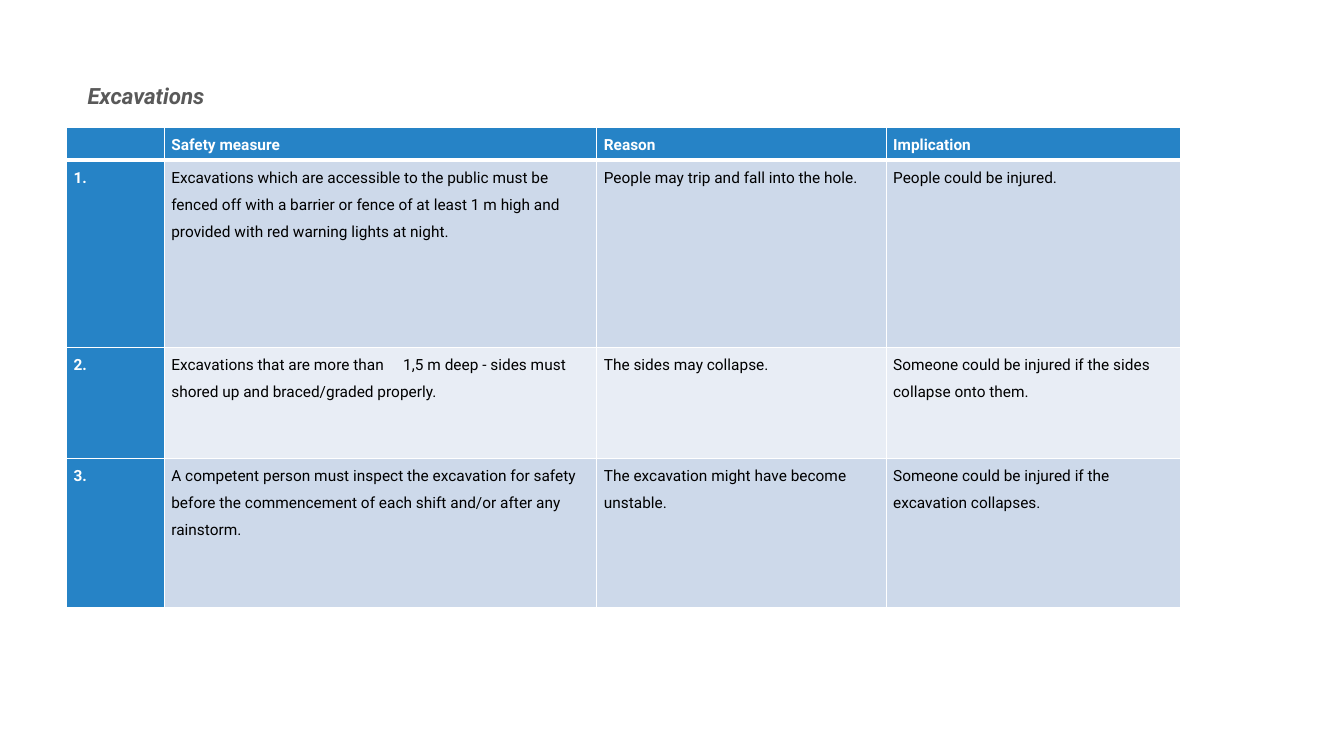
from lxml.etree import SubElement
from pptx import Presentation
from pptx.dml.color import RGBColor
from pptx.oxml.ns import qn
from pptx.util import Inches, Pt

FONT = "Roboto"
BLUE, LIGHT, PALE = "2683C6", "CDD9EA", "E8EDF5"
WHITE, BLACK, GREY = "FFFFFF", "000000", "595959"

COLUMN_WIDTHS = [0.97, 4.29, 2.87, 2.92]
ROW_HEIGHTS = [0.33, 1.86, 1.1, 1.48]
TAB_POSITION = 2.3
ROWS = [
    ["", "Safety measure", "Reason", "Implication"],
    ["1.",
     "Excavations which are accessible to the public must be fenced off with a barrier "
     "or fence of at least 1 m high and provided with red warning lights at night.",
     "People may trip and fall into the hole.",
     "People could be injured."],
    ["2.",
     "Excavations that are more than\t1,5 m deep - sides must shored up and "
     "braced/graded properly.",
     "The sides may collapse.",
     "Someone could be injured if the sides collapse onto them."],
    ["3.",
     "A competent person must inspect the excavation for safety before the "
     "commencement of each shift and/or after any rainstorm.",
     "The excavation might have become unstable.",
     "Someone could be injured if the excavation collapses."],
]


def color(value):
    return RGBColor.from_string(value)


def set_attributes(target, values):
    for name, value in values.items():
        setattr(target, name, value)


def write_text(paragraph, text, font_color, spacing, **font):
    set_attributes(paragraph, spacing)
    if "\t" in text:
        tabs = SubElement(paragraph._p.get_or_add_pPr(), qn("a:tabLst"))
        SubElement(tabs, qn("a:tab"), pos=str(Inches(TAB_POSITION)), algn="l")
    run = paragraph.add_run()
    run.text = text
    set_attributes(run.font, {"name": FONT, **font})
    run.font.color.rgb = color(font_color)


def set_borders(cell, widths):
    """Draw white borders; must run before the cell is filled."""
    properties = cell._tc.get_or_add_tcPr()
    for side, width in widths.items():
        line = SubElement(properties, qn(f"a:ln{side}"), w=str(Pt(width)))
        fill = SubElement(line, qn("a:solidFill"))
        SubElement(fill, qn("a:srgbClr"), val=WHITE)


def add_title(slide, text):
    box = slide.shapes.add_textbox(Inches(0.77), Inches(0.69), Inches(11.81), Inches(0.5))
    box.text_frame.word_wrap = True
    write_text(box.text_frame.paragraphs[0], text, GREY, {"line_spacing": 1.3},
               size=Pt(16), bold=True, italic=True)


def fill_cell(cell, text, row, column):
    set_attributes(cell, {"margin_left": Inches(0.07), "margin_right": Inches(0.07),
                          "margin_top": 0, "margin_bottom": 0})
    set_borders(cell, {"L": 1, "R": 1, "T": 3 if row == 1 else 1, "B": 3 if row == 0 else 1})
    is_heading = row == 0 or column == 0
    cell.fill.solid()
    cell.fill.fore_color.rgb = color(BLUE if is_heading else LIGHT if row % 2 else PALE)
    if text:
        write_text(cell.text_frame.paragraphs[0], text, WHITE if is_heading else BLACK,
                   {"line_spacing": 1.5, "space_after": Pt(3)},
                   size=Pt(11), bold=is_heading)


def add_safety_table(slide):
    frame = slide.shapes.add_table(len(ROWS), len(COLUMN_WIDTHS), Inches(0.66), Inches(1.26),
                                   Inches(sum(COLUMN_WIDTHS)), Inches(sum(ROW_HEIGHTS)))
    table = frame.table
    table.first_col = True
    for column, width in zip(table.columns, COLUMN_WIDTHS):
        column.width = Inches(width)
    for row, height in zip(table.rows, ROW_HEIGHTS):
        row.height = Inches(height)
    for row, texts in enumerate(ROWS):
        for column, text in enumerate(texts):
            fill_cell(table.cell(row, column), text, row, column)


def main():
    presentation = Presentation()
    presentation.slide_width = Inches(13.33)
    presentation.slide_height = Inches(7.5)
    slide = presentation.slides.add_slide(presentation.slide_layouts[6])
    add_title(slide, "Excavations")
    add_safety_table(slide)
    presentation.save("out.pptx")


if __name__ == "__main__":
    main()
